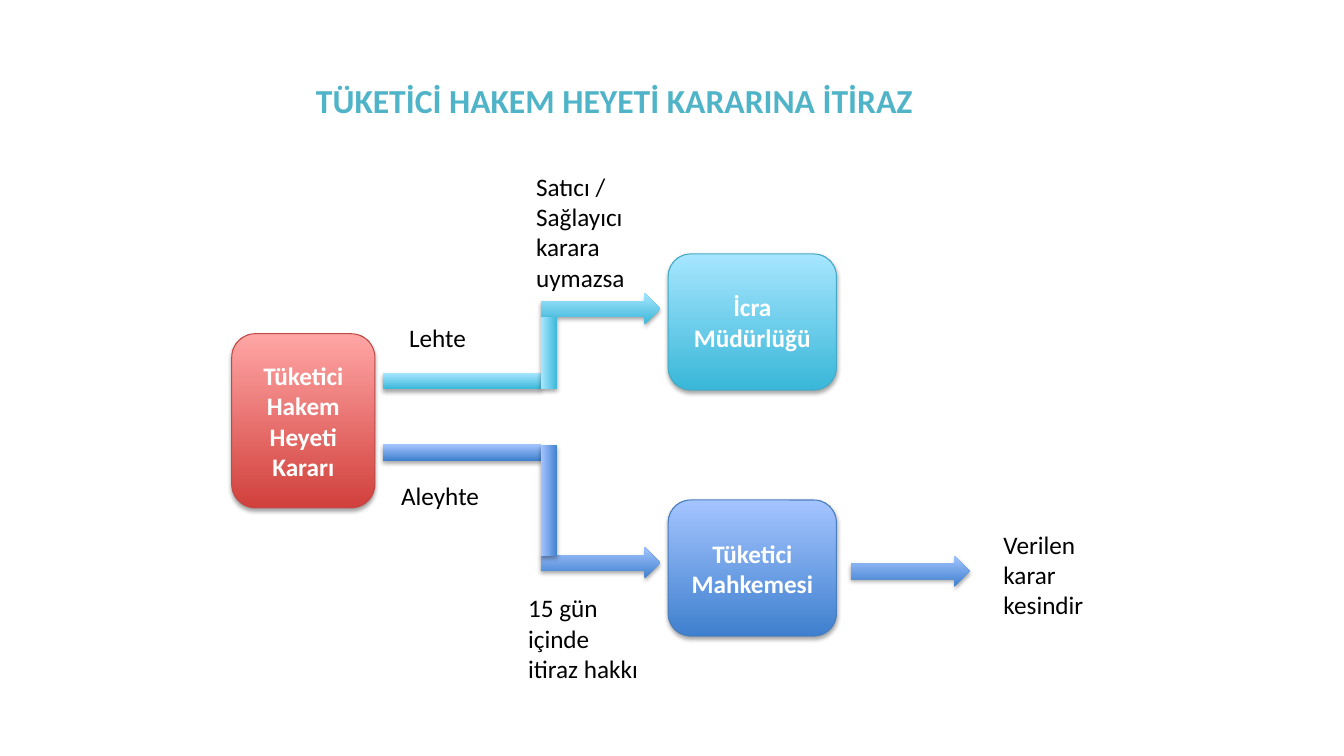
"""Build the flow chart slide on objections to consumer arbitration decisions."""
import pptx
import pptx.dml.color
import pptx.enum.shapes
import pptx.enum.text
import pptx.oxml
import pptx.oxml.ns
import pptx.util

Cm = pptx.util.Cm
Pt = pptx.util.Pt
RGBColor = pptx.dml.color.RGBColor
MSO_SHAPE = pptx.enum.shapes.MSO_SHAPE
MSO_ANCHOR = pptx.enum.text.MSO_ANCHOR
PP_ALIGN = pptx.enum.text.PP_ALIGN

TITLE_TEAL = RGBColor(0x50, 0xB4, 0xC8)
BLACK = RGBColor(0x00, 0x00, 0x00)
WHITE = RGBColor(0xFF, 0xFF, 0xFF)
RED = (RGBColor(0xD1, 0x40, 0x3C), RGBColor(0xFF, 0xA6, 0xA5), RGBColor(0xBF, 0x4C, 0x48))
AQUA = (RGBColor(0x39, 0xB7, 0xD8), RGBColor(0xA7, 0xE6, 0xFF), RGBColor(0x46, 0xAA, 0xC5))
BLUE = (RGBColor(0x3F, 0x80, 0xCE), RGBColor(0xA4, 0xC4, 0xFF), RGBColor(0x4B, 0x7E, 0xBC))

SHADOW_XML = (
    f'<a:outerShdw {pptx.oxml.ns.nsdecls("a")} blurRad="{Pt(3.1)}" dist="{Pt(1.8)}" '
    'dir="5400000" rotWithShape="0"><a:srgbClr val="000000">'
    '<a:alpha val="35000"/></a:srgbClr></a:outerShdw>'
)


def write(tf, text, size=18, color=BLACK, bold=False, align=PP_ALIGN.LEFT,
          anchor=MSO_ANCHOR.TOP, font="Calibri"):
    """Put formatted, wrapping text into a text frame."""
    tf.word_wrap = True
    tf.vertical_anchor = anchor
    p = tf.paragraphs[0]
    p.alignment = align
    r = p.add_run()
    r.text = text
    r.font.name = font
    r.font.size = Pt(size)
    r.font.bold = bold
    r.font.color.rgb = color


class FlowSlide:
    """Hold the slide and the style of its flow chart elements."""

    bar = 0.41
    arrow_size = (3, 0.79)

    def __init__(self, prs):
        """Add a title-only slide."""
        self.s = prs.slides.add_slide(prs.slide_layouts[5])

    def title(self, text, x, y, w, h):
        """Place and format the title placeholder."""
        sp = self.s.shapes.title
        sp.left, sp.top, sp.width, sp.height = Cm(x), Cm(y), Cm(w), Cm(h)
        write(sp.text_frame, text, size=24, color=TITLE_TEAL, bold=True,
              align=PP_ALIGN.CENTER)
        sp.text_frame.auto_size = pptx.enum.text.MSO_AUTO_SIZE.NONE

    def label(self, text, x, y, w, h):
        """Add a plain text label."""
        sp = self.s.shapes.add_textbox(Cm(x), Cm(y), Cm(w), Cm(h))
        write(sp.text_frame, text)
        sp.text_frame.auto_size = pptx.enum.text.MSO_AUTO_SIZE.SHAPE_TO_FIT_TEXT

    def shape(self, kind, palette, x, y, w, h):
        """Add a borderless gradient shape with a soft shadow."""
        sp = self.s.shapes.add_shape(kind, Cm(x), Cm(y), Cm(w), Cm(h))
        sp.fill.gradient()
        sp.fill.gradient_angle = 90
        for stop, color in zip(sp.fill.gradient_stops, palette):
            stop.color.rgb = color
        sp.line.fill.background()
        sp.shadow.inherit = False
        effects = sp._element.spPr.find(pptx.oxml.ns.qn("a:effectLst"))
        effects.append(pptx.oxml.parse_xml(SHADOW_XML))
        return sp

    def box(self, text, palette, x, y, w, h):
        """Add an outlined rounded box with bold text."""
        sp = self.shape(MSO_SHAPE.ROUNDED_RECTANGLE, palette, x, y, w, h)
        sp.line.color.rgb = palette[2]
        sp.line.width = Pt(0.75)
        write(sp.text_frame, text, color=WHITE, bold=True,
              align=PP_ALIGN.CENTER, anchor=MSO_ANCHOR.MIDDLE)

    def arrow(self, palette, x, y):
        """Add a right arrow."""
        self.shape(MSO_SHAPE.RIGHT_ARROW, palette, x, y, *self.arrow_size)

    def branch(self, palette, arrow_y, bar_y, riser_y, riser_len):
        """Add an arrow reached by a horizontal bar and a riser."""
        x, w = 9.65, 3.99
        corner = x + w
        self.arrow(palette, corner, arrow_y)
        self.shape(MSO_SHAPE.RECTANGLE, palette, x, bar_y, w, self.bar)
        riser_x = corner + (self.bar - riser_len) / 2
        sp = self.shape(MSO_SHAPE.RECTANGLE, palette, riser_x, riser_y, riser_len, self.bar)
        sp.rotation = 270


def main():
    """Build and save the presentation."""
    prs = pptx.Presentation()
    prs.slide_width, prs.slide_height = Cm(33.87), Cm(19.05)
    flow = FlowSlide(prs)
    flow.title("TÜKETİCİ HAKEM HEYETİ KARARINA İTİRAZ", 7.65, 1.88, 15.67, 1.27)
    flow.box("Tüketici Hakem Heyeti Kararı", RED, 5.84, 8.41, 3.61, 4.39)
    flow.branch(AQUA, 7.39, 9.4, 8.69, 1.8)
    flow.branch(BLUE, 13.79, 11.2, 12.4, 2.79)
    flow.box("İcra Müdürlüğü", AQUA, 16.84, 6.4, 4.24, 3.43)
    flow.box("Tüketici Mahkemesi", BLUE, 16.84, 12.6, 4.24, 3.43)
    flow.arrow(BLUE, 21.44, 14)
    for text, x, y, w, h in (
        ("Lehte", 10.06, 8, 2.21, 1.02),
        ("Aleyhte", 9.86, 11.99, 2.59, 1.02),
        ("15 gün içinde itiraz hakkı", 13.06, 14.81, 3.4, 2.57),
        ("Satıcı / Sağlayıcı karara uymazsa", 13.26, 4.19, 3.81, 3.33),
        ("Verilen karar kesindir", 25.04, 13.21, 3.4, 2.57),
    ):
        flow.label(text, x, y, w, h)
    prs.save("out.pptx")


if __name__ == "__main__":
    main()
